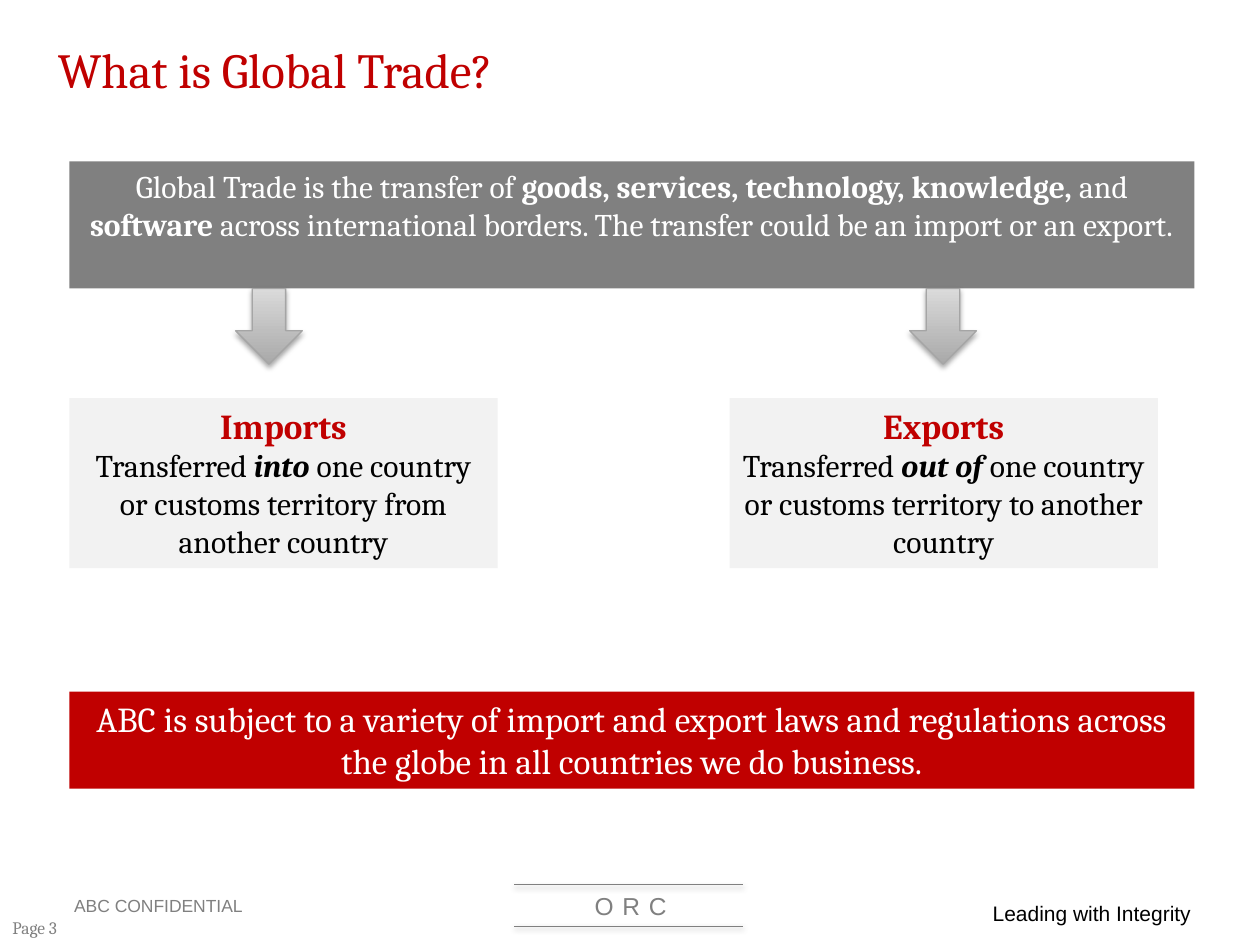
"""Build the slide that explains what global trade is."""
import pptx
import pptx.dml.color
import pptx.enum.shapes
import pptx.enum.text
import pptx.oxml
import pptx.oxml.ns
import pptx.util

RGB = pptx.dml.color.RGBColor
RED = RGB(0xC0, 0x00, 0x00)
GREY = RGB(0x80, 0x80, 0x80)
PALE = RGB(0xF2, 0xF2, 0xF2)
DARK = RGB(0xA9, 0xA9, 0xA9)
LIGHT = RGB(0xDA, 0xDA, 0xDA)
EDGE = RGB(0xA5, 0xA5, 0xA5)
WHITE = RGB(0xFF, 0xFF, 0xFF)
BLACK = RGB(0x00, 0x00, 0x00)

COLS, ROWS = 100, 75
CELL = pptx.util.Inches(0.1)
LEFT, WIDE = 5.5, 89.3
ALIGN = pptx.enum.text.PP_ALIGN
ANCHOR = pptx.enum.text.MSO_ANCHOR
KIND = pptx.enum.shapes.MSO_SHAPE


def grid(*cells):
    """Turn grid cells into slide lengths."""
    return [round(cell * CELL) for cell in cells]


def write(para, runs, size, color, face="Cambria", align=ALIGN.CENTER):
    """Fill a paragraph with (text, bold, italic) runs or one plain text."""
    para.alignment = align
    font = para.font
    font.name, font.size, font.color.rgb = face, pptx.util.Pt(size), color
    for text, bold, slant in [(runs, None, None)] if isinstance(runs, str) else runs:
        run = para.add_run()
        run.text = text
        run.font.bold, run.font.italic = bold, slant


def label(slide, area, text, size, color, face="Arial", align=ALIGN.LEFT,
          wrap=True, anchor=ANCHOR.TOP):
    """Add a plain text box and return its paragraph."""
    frame = slide.shapes.add_textbox(*grid(*area)).text_frame
    frame.word_wrap, frame.vertical_anchor = wrap, anchor
    write(frame.paragraphs[0], text, size, color, face, align)
    return frame.paragraphs[0]


def panel(slide, area, fill, *paras):
    """Add a filled rectangle with (runs, size, color) paragraphs."""
    shape = slide.shapes.add_shape(KIND.RECTANGLE, *grid(*area))
    shape.shadow.inherit = False
    shape.fill.solid()
    shape.fill.fore_color.rgb = fill
    shape.line.fill.background()
    frame = shape.text_frame
    frame.word_wrap, frame.vertical_anchor = True, ANCHOR.TOP
    for num, (runs, size, color) in enumerate(paras):
        para = frame.add_paragraph() if num else frame.paragraphs[0]
        write(para, runs, size, color)


def shade(shape, blur, gap, alpha):
    """Give a shape a soft black shadow below it."""
    shape._element.spPr.append(pptx.oxml.parse_xml(
        f'<a:effectLst {pptx.oxml.ns.nsdecls("a")}>'
        f'<a:outerShdw blurRad="{pptx.util.Pt(blur)}" dist="{pptx.util.Pt(gap)}"'
        ' dir="5400000" rotWithShape="0"><a:srgbClr val="000000">'
        f'<a:alpha val="{alpha * 1000}"/></a:srgbClr></a:outerShdw></a:effectLst>'))


def rule(slide, left, right, top):
    """Draw a thin level line with a shadow."""
    line = slide.shapes.add_connector(
        pptx.enum.shapes.MSO_CONNECTOR.STRAIGHT, *grid(left, top, right, top))
    line.line.color.rgb, line.line.width = GREY, pptx.util.Pt(0.5)
    shade(line, 3.1, 1.6, 38)


def arrow(slide, left):
    """Add a shaded down arrow below the top panel."""
    shape = slide.shapes.add_shape(KIND.DOWN_ARROW, *grid(left, 22.9, 5.3, 6))
    shape.fill.gradient()
    shape.fill.gradient_angle = 90
    for stop, color, place in zip(shape.fill.gradient_stops, (DARK, LIGHT), (0, 1)):
        stop.color.rgb, stop.position = color, place
    shape.line.color.rgb, shape.line.width = EDGE, pptx.util.Pt(0.75)
    shade(shape, 3.1, 1.8, 35)


def footer(slide):
    """Add the marks along the foot of the slide."""
    label(slide, (4.9, 70.5, 16.3, 2.7), "ABC CONFIDENTIAL", 10, GREY,
          anchor=ANCHOR.MIDDLE)
    mark = label(slide, (39.7, 70.2, 20.7, 3.4), "ORC", 14, GREY, align=ALIGN.CENTER)
    mark.runs[0].font._element.set("spc", "500")
    for top in (73.5, 70.2):
        rule(slide, 40.8, 59, top)
    label(slide, (77.8, 71, 17.9, 3), "Leading with Integrity", 12, BLACK, wrap=False)
    label(slide, (0, 72.3, 7.1, 2.7), "Page 3", 10, GREY, "Cambria")


def main():
    """Build and save the slide."""
    deck = pptx.Presentation()
    deck.slide_width, deck.slide_height = grid(COLS, ROWS)
    slide = deck.slides.add_slide(deck.slide_layouts[5])
    footer(slide)

    title = slide.shapes.title
    title.left, title.top, title.width, title.height = grid(3.6, 0.7, 84.5, 9.5)
    title.text_frame.vertical_anchor = ANCHOR.MIDDLE
    write(title.text_frame.paragraphs[0], "What is Global Trade?", 28, RED,
          align=ALIGN.LEFT)

    intro = [("Global Trade is the transfer of ", False, False),
             ("goods, services, technology, knowledge, ", True, False),
             ("and ", False, False), ("software", True, False),
             (" across international borders. The transfer could be"
              " an import or an export.", False, False)]
    panel(slide, (LEFT, 12.8, WIDE, 10.1), GREY, (intro, 18, WHITE))

    sides = [(LEFT, 18.7, "Imports", "into ", "from another country"),
             (57.9, 72.2, "Exports", "out of ", "to another country")]
    for left, tip, head, way, end in sides:
        body = [("Transferred ", False, False), (way, True, True),
                ("one country or customs territory " + end, False, False)]
        panel(slide, (left, 31.6, 34, 13.5), PALE,
              ([(head, True, False)], 20, RED), (body, 18, BLACK))
        arrow(slide, tip)

    panel(slide, (LEFT, 54.9, WIDE, 7.7), RED,
          ("ABC is subject to a variety of import and export laws and regulations"
           " across the globe in all countries we do business.", 20, WHITE))
    deck.save("out.pptx")


if __name__ == "__main__":
    main()
